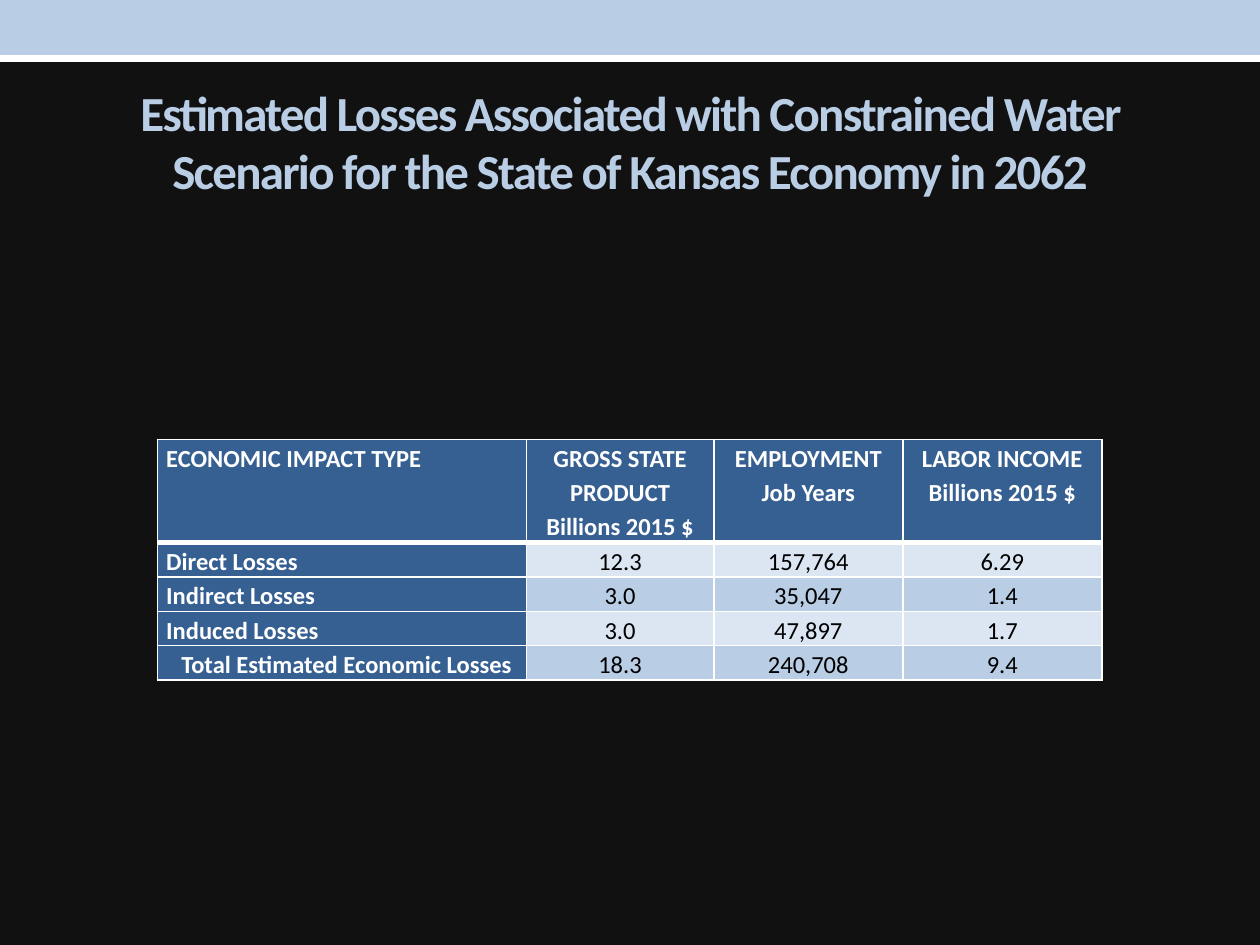
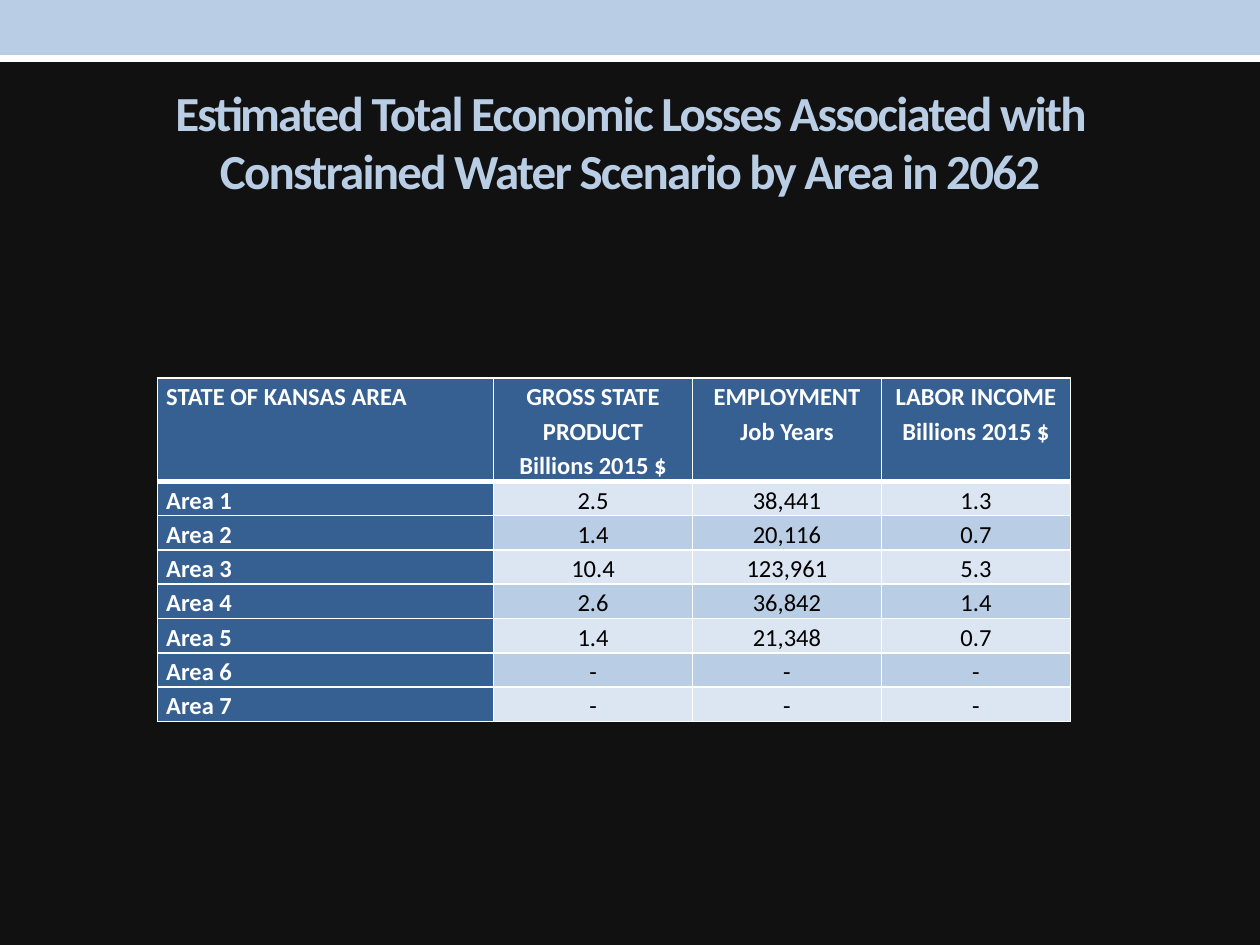
"""Build two slides of water scenario loss tables."""
from lxml.etree import SubElement as Sub
from pptx import Presentation
from pptx.dml.color import RGBColor as Rgb
from pptx.enum.shapes import MSO_SHAPE as Geo
from pptx.enum.text import MSO_ANCHOR as Anchor, MSO_AUTO_SIZE as Auto, PP_ALIGN as Align
from pptx.oxml.ns import qn
from pptx.util import Cm, Pt

HUES = {"back": "111111", "pale": "B9CDE5", "light": "DCE6F2",
        "blue": "376092", "white": "FFFFFF", "black": "000000"}
FONT = "Calibri"
HEADS = ["GROSS STATE PRODUCT\nBillions 2015 $", "EMPLOYMENT\nJob Years",
         "LABOR INCOME\nBillions 2015 $"]
BANDS = [("white", 0.61, 0.64), ("pale", 0, 1.07)]
HEAD_H, ROW_H = 2.08, 0.69
SLIDES = [
    {"title": "Estimated Losses Associated with Constrained Water "
              "Scenario for the State of Kansas Economy in 2062",
     "top": 8.86, "cols": [7.44, 3.78, 3.81, 4.01],
     "rows": [["ECONOMIC IMPACT TYPE", *HEADS],
              ["Direct Losses", "12.3", "157,764", "6.29"],
              ["Indirect Losses", "3.0", "35,047", "1.4"],
              ["Induced Losses", "3.0", "47,897", "1.7"],
              ["Total Estimated Economic Losses ", "18.3", "240,708", "9.4"]]},
    {"title": "Estimated Total Economic Losses Associated with "
              "Constrained Water Scenario by Area in 2062",
     "top": 7.62, "cols": [6.78, 4.01, 3.81, 3.81],
     "rows": [["STATE OF KANSAS AREA", *HEADS],
              ["Area 1", "2.5", "38,441", "1.3"],
              ["Area 2", "1.4", "20,116", "0.7"],
              ["Area 3", "10.4", "123,961", "5.3"],
              ["Area 4", "2.6", "36,842", "1.4"],
              ["Area 5", "1.4", "21,348", "0.7"],
              ["Area 6", "-", "-", "-"],
              ["Area 7", "-", "-", "-"]]},
]


def style(para, size, hue, bold, align):
    para.alignment = align
    for run in para.runs:
        run.font.name, run.font.size, run.font.bold = FONT, Pt(size), bold
        run.font.color.rgb = Rgb.from_string(HUES[hue])


def edge(cell, side, width):
    line = Sub(cell._tc.get_or_add_tcPr(), qn(f"a:ln{side}"), w=str(Pt(width)))
    Sub(Sub(line, qn("a:solidFill")), qn("a:srgbClr"), val=HUES["white"])


prs = Presentation()
prs.slide_width, prs.slide_height = Cm(25.4), Cm(19.05)
back = prs.slide_master.background.fill
back.solid()
back.fore_color.rgb = Rgb.from_string(HUES["back"])

for page in SLIDES:
    slide = prs.slides.add_slide(prs.slide_layouts[5])

    title = slide.shapes.title
    title.left, title.top, title.width, title.height = Cm(1.27), Cm(1.47), Cm(22.86), Cm(2.74)
    frame = title.text_frame
    frame.text = page["title"]
    frame.auto_size, frame.vertical_anchor = Auto.NONE, Anchor.MIDDLE
    style(frame.paragraphs[0], 28, "pale", True, Align.CENTER)
    for run in frame.paragraphs[0].runs:
        run.font._element.set("spc", "-100")

    rows, cols = page["rows"], page["cols"]
    high = HEAD_H + ROW_H * (len(rows) - 1)
    table = slide.shapes.add_table(len(rows), len(cols), Cm(3.17), Cm(page["top"]),
                                   Cm(sum(cols)), Cm(high)).table
    table.first_col = True
    for col, width in zip(table.columns, cols):
        col.width = Cm(width)
    for r, row in enumerate(rows):
        table.rows[r].height = Cm(ROW_H if r else HEAD_H)
        for c, text in enumerate(row):
            cell = table.cell(r, c)
            cell.text = text
            cell.margin_left = cell.margin_right = Cm(0.18)
            cell.margin_top = cell.margin_bottom = 0
            label = r == 0 or c == 0
            if r == 0:
                cell.vertical_anchor = Anchor.TOP
            else:
                cell.vertical_anchor = Anchor.BOTTOM if c else Anchor.MIDDLE
            for side, width in zip("LRTB", (1, 1, 3 if r == 1 else 1, 1 if r else 3)):
                edge(cell, side, width)
            hue = "blue" if label else "light" if r % 2 else "pale"
            cell.fill.solid()
            cell.fill.fore_color.rgb = Rgb.from_string(HUES[hue])
            align = Align.CENTER if c else Align.RIGHT if text.startswith("Total") else Align.LEFT
            for para in cell.text_frame.paragraphs:
                para.line_spacing = 1.15
                style(para, 14, "white" if label else "black", label, align)

    for hue, top, tall in BANDS:
        band = slide.shapes.add_shape(Geo.RECTANGLE, 0, Cm(top), prs.slide_width, Cm(tall))
        band.shadow.inherit = False
        band.fill.solid()
        band.fill.fore_color.rgb = Rgb.from_string(HUES[hue])
        if hue == "pale":
            band.line.color.rgb = Rgb.from_string(HUES[hue])
            band.line.width = Pt(2)
        else:
            band.line.fill.background()

prs.save("out.pptx")
